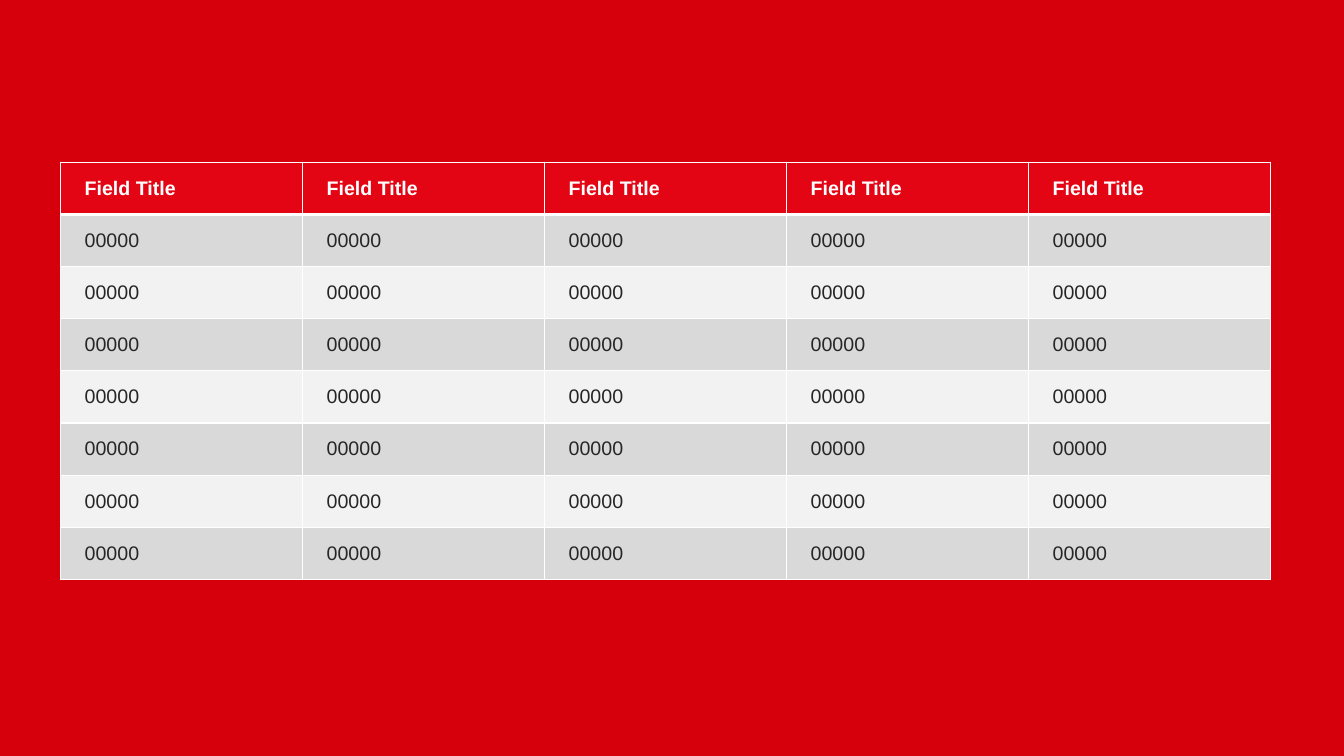
import dataclasses

import lxml.etree
import pptx
import pptx.dml.color
import pptx.enum.text
import pptx.oxml.ns
import pptx.util

Inches = pptx.util.Inches
Pt = pptx.util.Pt


@dataclasses.dataclass(frozen=True)
class Theme:
    background: str = "D6000D"
    header: str = "E30513"
    bands: tuple = ("D9D9D9", "F2F2F2")
    border: str = "FFFFFF"
    header_text: str = "FFFFFF"
    body_text: str = "262626"
    font: str = "Arial"
    size: int = 14


def rgb(value):
    return pptx.dml.color.RGBColor.from_string(value)


def add_border(cell, side, color, width):
    qn = pptx.oxml.ns.qn
    tc_pr = cell._tc.get_or_add_tcPr()
    ln = lxml.etree.SubElement(tc_pr, qn(f"a:ln{side}"), w=str(Pt(width)))
    fill = lxml.etree.SubElement(ln, qn("a:solidFill"))
    lxml.etree.SubElement(fill, qn("a:srgbClr"), val=color)


theme = Theme()
columns = 5
rows = [["Field Title"] * columns] + [["00000"] * columns for _ in range(7)]

prs = pptx.Presentation()
prs.slide_width = Inches(13.33)
prs.slide_height = Inches(7.5)
slide = prs.slides.add_slide(prs.slide_layouts[6])
slide.background.fill.solid()
slide.background.fill.fore_color.rgb = rgb(theme.background)

table = slide.shapes.add_table(
    len(rows), columns, Inches(0.6), Inches(1.61), Inches(12), Inches(4.14)
).table

for i, values in enumerate(rows):
    is_header = i == 0
    for j, value in enumerate(values):
        cell = table.cell(i, j)
        widths = {"L": 1, "R": 1, "T": 3 if i == 1 else 1, "B": 3 if is_header else 1}
        for side, width in widths.items():
            add_border(cell, side, theme.border, width)
        cell.fill.solid()
        cell.fill.fore_color.rgb = rgb(theme.header if is_header else theme.bands[(i - 1) % 2])
        cell.margin_left = Inches(0.24)
        cell.margin_right = Inches(0.1)
        cell.margin_top = cell.margin_bottom = Inches(0.05)
        cell.vertical_anchor = pptx.enum.text.MSO_ANCHOR.MIDDLE
        p = cell.text_frame.paragraphs[0]
        p.text = value
        p.font.name = theme.font
        p.font.size = Pt(theme.size)
        p.font.bold = is_header
        p.font.color.rgb = rgb(theme.header_text if is_header else theme.body_text)

prs.save("out.pptx")
